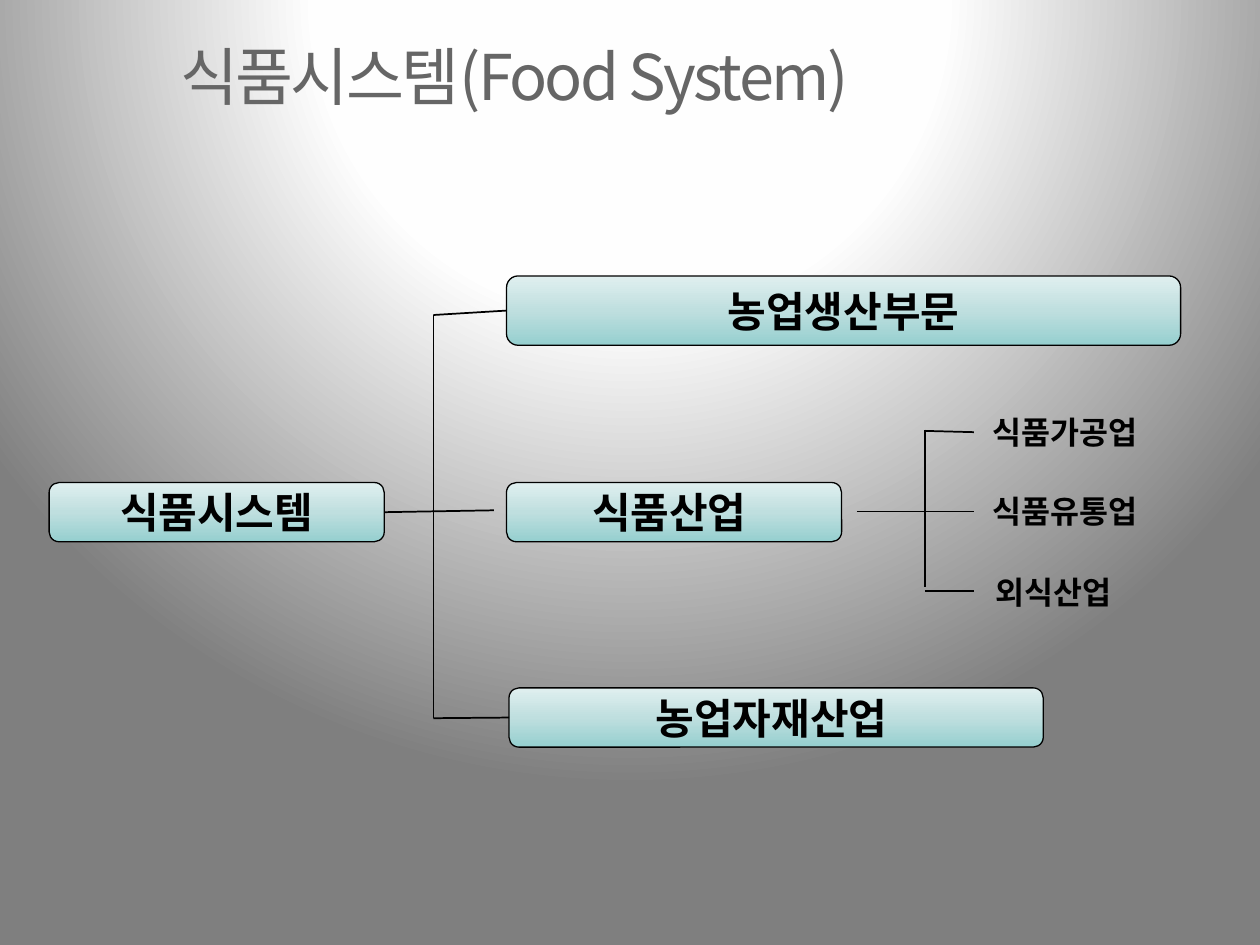
from dataclasses import dataclass
from typing import Optional

from lxml import etree
from pptx import Presentation
from pptx.dml.color import RGBColor
from pptx.enum import shapes, text
from pptx.oxml.ns import qn
from pptx.util import Inches, Pt

FONT = "Noto Sans CJK KR"
BLACK = RGBColor(0x00, 0x00, 0x00)
GRAY = RGBColor(0x66, 0x66, 0x66)
BOX_STOPS = [(0, RGBColor(0x95, 0xCF, 0xCF)),
             (50, RGBColor(0xBF, 0xDF, 0xDF)),
             (100, RGBColor(0xE0, 0xEF, 0xEF))]
PAGE_STOPS = [(0, RGBColor(0xFF, 0xFF, 0xFF)),
              (40, RGBColor(0xFE, 0xFE, 0xFE)),
              (100, RGBColor(0x7F, 0x7F, 0x7F))]
LEFT_SIDE, RIGHT_SIDE = 1, 3


@dataclass
class Box:
    label: str
    left: float
    top: float
    width: float
    height: float = 0.47


@dataclass
class Label:
    label: str
    left: float
    top: float
    width: float = 2.11


@dataclass
class Line:
    x1: float
    y1: float
    x2: float
    y2: float
    begin: Optional[str] = None  # box whose right side the line leaves
    end: Optional[str] = None    # box whose left side the line reaches


BOXES = {
    "system": Box("식품시스템", 0.39, 3.83, 2.66),
    "farming": Box("농업생산부문", 4.02, 2.19, 5.35, 0.55),
    "industry": Box("식품산업 ", 4.02, 3.83, 2.66),
    "materials": Box("농업자재산업 ", 4.04, 5.46, 4.24),
}
LABELS = [
    Label("식품가공업", 7.78, 3.23, 2.22),
    Label("식품유통업", 7.78, 3.86),
    Label("외식산업", 7.8, 4.5),
]
TRUNK, BRANCH, TIP = 3.44, 7.34, 7.73
LINES = [
    Line(3.05, 4.06, 3.92, 4.05, begin="system"),
    Line(TRUNK, 2.5, TRUNK, 5.7),
    Line(TRUNK, 2.5, 4.02, 2.46, end="farming"),
    Line(TRUNK, 5.7, 4.04, 5.7, end="materials"),
    Line(6.8, 4.06, TIP, 4.06),
    Line(BRANCH, 3.41, BRANCH, 4.66),
    Line(BRANCH, 3.42, TIP, 3.43),
    Line(BRANCH, 4.69, TIP, 4.69),
]


def set_gradient(fill, owner, stops) -> etree._Element:
    """Give the fill these stops and return its element, still without a direction."""
    fill.gradient()
    grad = next(owner.iter(qn("a:gradFill")))
    for child in list(grad):
        grad.remove(child)
    gs_list = etree.SubElement(grad, qn("a:gsLst"))
    for pos, color in stops:
        gs = etree.SubElement(gs_list, qn("a:gs"), pos=str(pos * 1000))
        etree.SubElement(gs, qn("a:srgbClr"), val=str(color))
    return grad


def paint_background(s) -> None:
    grad = set_gradient(s.background.fill, s.element, PAGE_STOPS)
    path = etree.SubElement(grad, qn("a:path"), path="circle")
    etree.SubElement(path, qn("a:fillToRect"),
                     l="50000", t="-80000", r="50000", b="180000")


def add_run(p, words: str, size: float, color: RGBColor, bold: bool = False):
    r = p.add_run()
    r.text = words
    r.font.size = Pt(size)
    r.font.bold = bold
    r.font.color.rgb = color
    r.font.name = FONT
    etree.SubElement(r.font._element, qn("a:ea"), typeface=FONT)
    return r


def add_title(s) -> None:
    title = s.shapes.title
    title.left, title.top = Inches(1.33), Inches(0.16)
    title.width, title.height = Inches(8.67), Inches(0.87)
    tf = title.text_frame
    tf.vertical_anchor = text.MSO_ANCHOR.MIDDLE
    p = tf.paragraphs[0]
    p.alignment = text.PP_ALIGN.LEFT
    r = add_run(p, "식품시스템(Food System)", 36, GRAY)
    r.font._element.set("spc", "-150")


def add_box(s, box: Box):
    sp = s.shapes.add_shape(
        shapes.MSO_SHAPE.ROUNDED_RECTANGLE, Inches(box.left), Inches(box.top),
        Inches(box.width), Inches(box.height))
    sp.shadow.inherit = False
    grad = set_gradient(sp.fill, sp._element, BOX_STOPS)
    etree.SubElement(grad, qn("a:lin"), ang="16200000", scaled="0")
    sp.line.color.rgb = BLACK
    sp.line.width = Pt(0.75)
    tf = sp.text_frame
    tf.word_wrap = False
    tf.vertical_anchor = text.MSO_ANCHOR.MIDDLE
    p = tf.paragraphs[0]
    p.alignment = text.PP_ALIGN.CENTER
    add_run(p, box.label, 24, BLACK, bold=True)
    return sp


def add_label(s, label: Label) -> None:
    sp = s.shapes.add_textbox(Inches(label.left), Inches(label.top),
                              Inches(label.width), Inches(0.4))
    tf = sp.text_frame
    tf.word_wrap = True
    tf.auto_size = text.MSO_AUTO_SIZE.SHAPE_TO_FIT_TEXT
    add_run(tf.paragraphs[0], label.label, 18, BLACK, bold=True)


def add_line(s, line: Line, boxes: dict) -> None:
    cx = s.shapes.add_connector(
        shapes.MSO_CONNECTOR.STRAIGHT, Inches(line.x1), Inches(line.y1),
        Inches(line.x2), Inches(line.y2))
    if line.begin:
        cx.begin_connect(boxes[line.begin], RIGHT_SIDE)
    if line.end:
        cx.end_connect(boxes[line.end], LEFT_SIDE)
    cx.line.color.rgb = BLACK
    cx.line.width = Pt(1)
    etree.SubElement(cx._element.spPr, qn("a:effectLst"))


def main() -> None:
    prs = Presentation()
    prs.slide_width, prs.slide_height = Inches(10), Inches(7.5)
    s = prs.slides.add_slide(prs.slide_layouts[5])
    paint_background(s)
    add_title(s)
    boxes = {name: add_box(s, box) for name, box in BOXES.items()}
    for line in LINES:
        add_line(s, line, boxes)
    for label in LABELS:
        add_label(s, label)
    prs.save("out.pptx")


if __name__ == "__main__":
    main()
